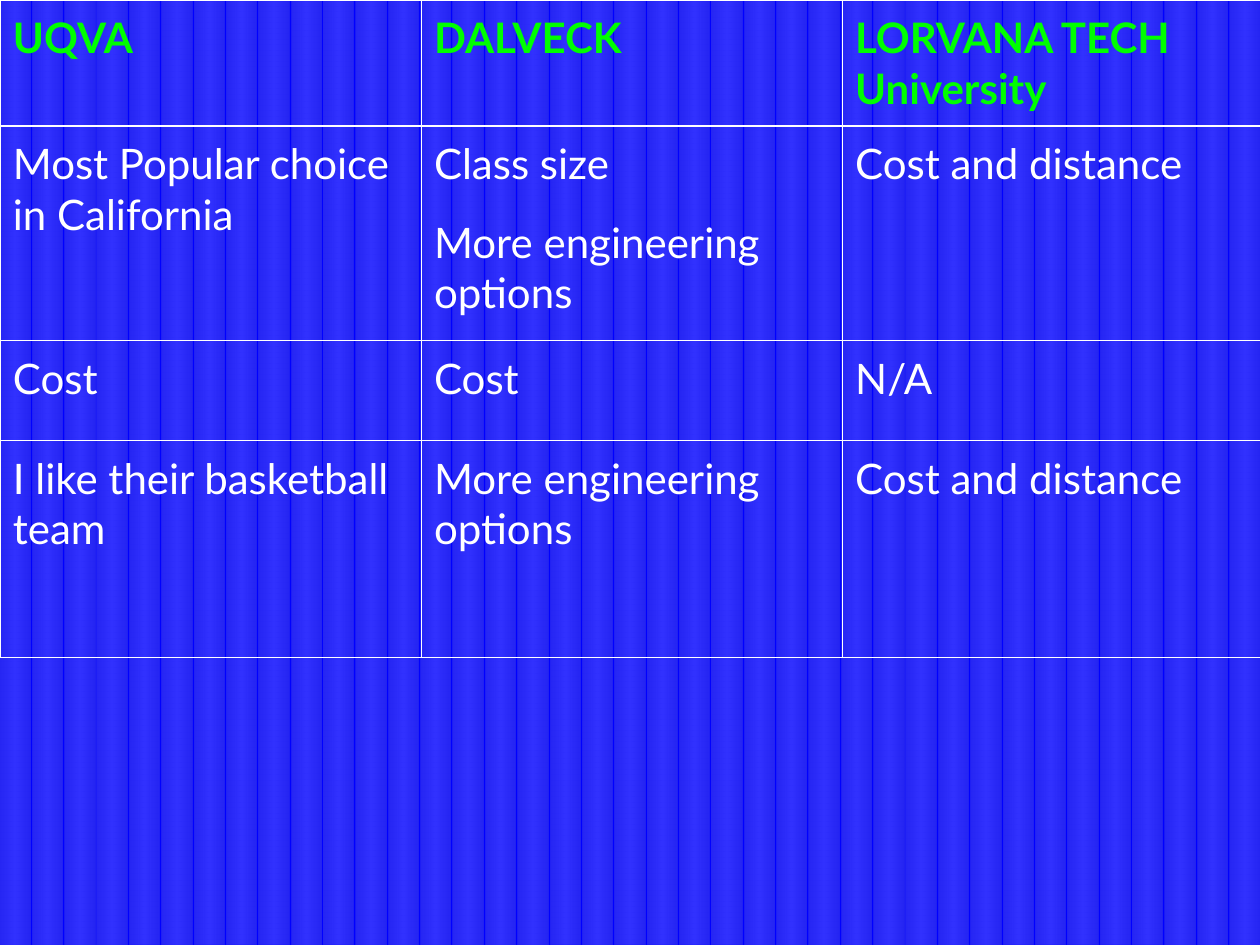
from pptx import Presentation
from pptx.dml.color import RGBColor
from pptx.enum import shapes
from pptx.oxml import parse_xml
from pptx.oxml.ns import nsdecls
from pptx.util import Cm, Pt

COLOR = {"back": "0000FF", "edge": "BFBFBF", "mid": "FFFFFF",
         "head": "00FF00", "body": "FFFFFF", "line": "FFFFFF"}
FONT = "Lato"
SIZE = 24
WIDE, HIGH = 25.4, 19.05

ROWS = [
    ["UQVA", "DALVECK", "LORVANA TECH University"],
    ["Most Popular choice in California",
     "Class size\nMore engineering options", "Cost and distance"],
    ["Cost", "Cost", "N/A"],
    ["I like their basketball team", "More engineering options",
     "Cost and distance"],
]
HEIGHTS = [2.54, 4.32, 2.02, 4.37]
COL = 8.49
INSET = 0.26

STRIPES = 39
BAND = 0.61
STOPS = [(0, "edge"), (50, "mid"), (97, "edge"), (100, "edge")]
ALPHA = 19


def add_stripe(slide, left):
    bar = slide.shapes.add_shape(shapes.MSO_SHAPE.RECTANGLE, Cm(left), Cm(0.03),
                                 Cm(BAND), Cm(HIGH - 0.03))
    bar.shadow.inherit = False
    bar.line.fill.background()
    stops = "".join(
        f'<a:gs pos="{pos * 1000}"><a:srgbClr val="{COLOR[name]}">'
        f'<a:alpha val="{ALPHA * 1000}"/></a:srgbClr></a:gs>'
        for pos, name in STOPS)
    fade = parse_xml(f'<a:gradFill {nsdecls("a")} rotWithShape="1">'
                     f'<a:gsLst>{stops}</a:gsLst><a:lin ang="0"/></a:gradFill>')
    bar._element.spPr.insert(2, fade)


def add_borders(cell):
    props = cell._tc.get_or_add_tcPr()
    for spot, side in enumerate(("lnL", "lnR", "lnT", "lnB")):
        line = parse_xml(
            f'<a:{side} {nsdecls("a")} w="{Pt(0.75)}"><a:solidFill>'
            f'<a:srgbClr val="{COLOR["line"]}"/></a:solidFill></a:{side}>')
        props.insert(spot, line)


def fill_cell(cell, words, head):
    cell.fill.background()
    add_borders(cell)
    cell.margin_left = cell.margin_right = Cm(INSET)
    cell.margin_top = cell.margin_bottom = Cm(0.25)
    cell.text_frame.text = words
    for spot, para in enumerate(cell.text_frame.paragraphs):
        para.space_before = Pt(16 if spot else 0)
        for run in para.runs:
            run.font.name = FONT
            run.font.size = Pt(SIZE)
            run.font.bold = head
            run.font.color.rgb = RGBColor.from_string(
                COLOR["head" if head else "body"])


def add_grid(slide):
    count = len(ROWS[0])
    table = slide.shapes.add_table(len(ROWS), count, Cm(0), Cm(0),
                                   Cm(COL * count), Cm(sum(HEIGHTS))).table
    table.first_row = table.horz_banding = False
    for col in table.columns:
        col.width = Cm(COL)
    for r, (words, height) in enumerate(zip(ROWS, HEIGHTS)):
        table.rows[r].height = Cm(height)
        for c, word in enumerate(words):
            fill_cell(table.cell(r, c), word, r == 0)


def main():
    deck = Presentation()
    deck.slide_width, deck.slide_height = Cm(WIDE), Cm(HIGH)
    slide = deck.slides.add_slide(deck.slide_layouts[6])
    back = slide.background.fill
    back.solid()
    back.fore_color.rgb = RGBColor.from_string(COLOR["back"])
    step = (WIDE - BAND) / (STRIPES - 1)
    for i in range(STRIPES):
        add_stripe(slide, i * step)
    add_grid(slide)
    deck.save("out.pptx")


if __name__ == "__main__":
    main()
